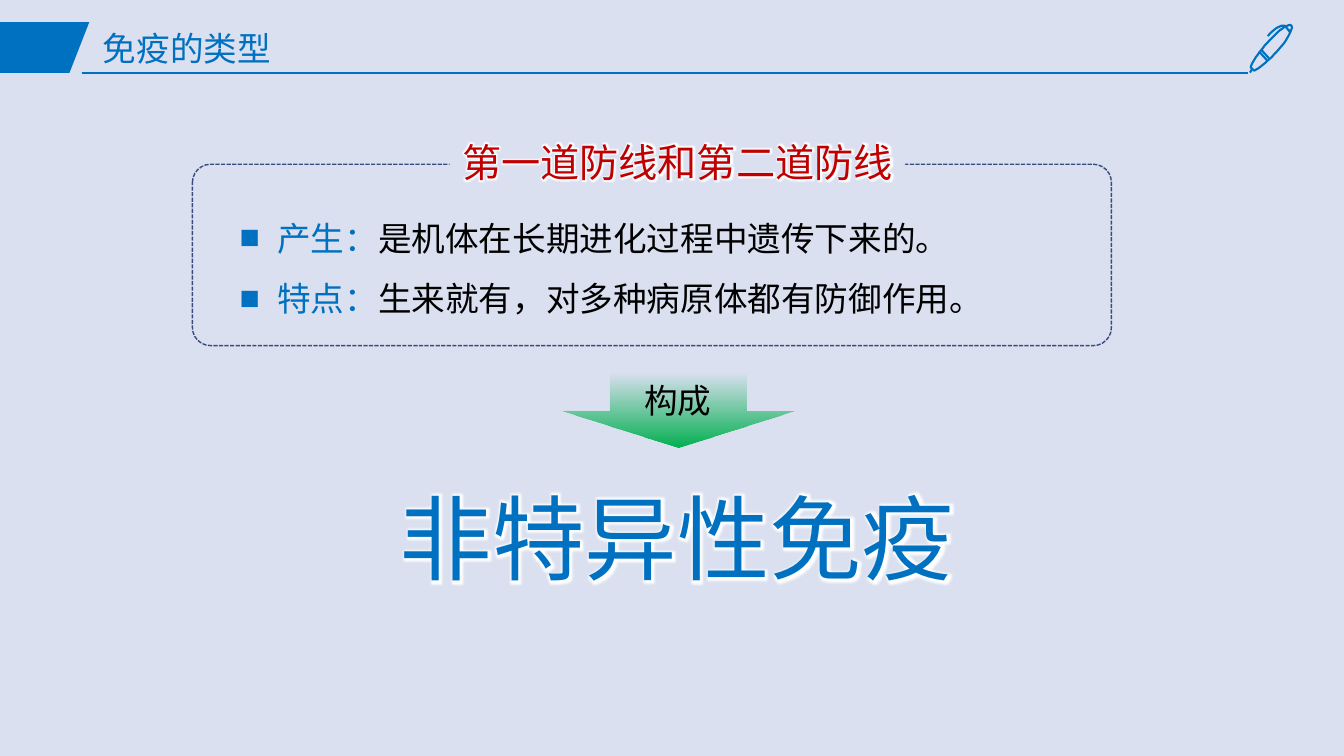
from dataclasses import dataclass

from lxml.etree import SubElement
from pptx import Presentation
from pptx.dml.color import RGBColor as RGB
from pptx.enum.dml import MSO_LINE as Dash
from pptx.enum.shapes import MSO_CONNECTOR as Conn, MSO_SHAPE as Shape
from pptx.enum.text import MSO_ANCHOR as Anchor, MSO_AUTO_SIZE as Auto, PP_ALIGN as Align
from pptx.oxml import parse_xml
from pptx.oxml.ns import nsdecls, qn
from pptx.util import Cm, Pt

COLORS = {"back": "DAE0EF", "blue": "0070C0", "red": "C00000", "green": "00B050",
          "navy": "374B7F", "black": "000000", "white": "FFFFFF"}
SERIF, SANS = "Times New Roman", "Noto Sans CJK SC"
UNIT = 3600  # freeform points are in hundredths of a centimetre

Point = tuple[int, int]


@dataclass
class Label:
    """A one-line text block on a plain ground."""
    text: str
    box: tuple[float, float, float, float]
    size: int
    color: str


@dataclass
class Fact:
    """A bulleted line with a coloured lead-in."""
    lead: str
    body: str


HEADING = Label("第一道防线和第二道防线", (11.33, 3.35, 11.48, 1.45), 28, "red")
CONCLUSION = Label("非特异性免疫", (9.75, 12.01, 14.63, 3.07), 66, "blue")
FACTS = [Fact("产生：", "是机体在长期进化过程中遗传下来的。"),
         Fact("特点：", "生来就有，对多种病原体都有防御作用。")]

BANNER = [(0, 56), (225, 56), (175, 184), (0, 184), (0, 56)]
# Two points make a straight stroke, 3n + 1 points a chain of Bézier curves
PEN = [
    [(3193, 152), (3175, 132)],
    [(3180, 127), (3198, 147)],
    [(3254, 64), (3249, 58), (3221, 76), (3193, 109), (3170, 135), (3155, 157),
     (3152, 170), (3152, 170), (3160, 178), (3160, 178), (3170, 175), (3193, 157),
     (3216, 132), (3244, 102), (3261, 71), (3254, 64)],
    [(3155, 175), (3150, 183)],
    [(3251, 81), (3251, 81), (3246, 74), (3239, 66), (3239, 66), (3226, 56), (3195, 91)],
]


def rgb(name: str) -> RGB:
    return RGB.from_string(COLORS[name])


def assign(obj, values: dict) -> None:
    for name, value in values.items():
        setattr(obj, name, value)


def fill_solid(sp, color: str) -> None:
    sp.fill.solid()
    sp.fill.fore_color.rgb = rgb(color)


def add_run(p, text: str, size: int, color: str, font: str, glow: bool = False) -> None:
    r = p.add_run()
    r.text = text
    assign(r.font, {"size": Pt(size), "name": font})
    r.font.color.rgb = rgb(color)
    rPr = r.font._element
    SubElement(rPr, qn("a:ea")).set("typeface", SANS)
    if glow:
        rPr.find(qn("a:solidFill")).addnext(parse_xml(
            f'<a:effectLst {nsdecls("a")}><a:glow rad="63500">'
            f'<a:srgbClr val="{COLORS["white"]}"/></a:glow></a:effectLst>'))


def add_label(shapes, label: Label) -> None:
    tb = shapes.add_textbox(*map(Cm, label.box))
    fill_solid(tb, "back")
    tf = tb.text_frame
    assign(tf, {"word_wrap": False, "auto_size": Auto.SHAPE_TO_FIT_TEXT})
    p = tf.paragraphs[0]
    p.alignment = Align.CENTER
    add_run(p, label.text, label.size, label.color, SERIF, glow=True)


def add_bullet(p) -> None:
    pPr = p._p.get_or_add_pPr()
    pPr.set("marL", str(Cm(0.95)))
    pPr.set("indent", str(-Cm(0.95)))
    color = SubElement(pPr, qn("a:buClr"))
    SubElement(color, qn("a:srgbClr")).set("val", COLORS["blue"])
    SubElement(pPr, qn("a:buFont")).set("typeface", SERIF)
    SubElement(pPr, qn("a:buChar")).set("char", "■")


def sample(stroke: list[Point], steps: int = 12) -> list[Point]:
    """Turn a chain of cubic curves into short segments."""
    if len(stroke) == 2:
        return stroke
    points = [stroke[0]]
    for i in range(0, len(stroke) - 1, 3):
        for k in range(1, steps + 1):
            t = k / steps
            weights = ((1 - t) ** 3, 3 * t * (1 - t) ** 2, 3 * t * t * (1 - t), t ** 3)
            points.append(tuple(round(sum(w * pt[axis] for w, pt in zip(weights, stroke[i:i + 4])))
                                for axis in (0, 1)))
    return points


def add_outline(shapes, strokes: list[list[Point]]):
    builder = shapes.build_freeform(*strokes[0][0], scale=UNIT)
    for i, stroke in enumerate(strokes):
        points = sample(stroke) if stroke is not BANNER else stroke
        if i:
            builder.move_to(*points[0])
        builder.add_line_segments(points[1:], close=points[0] == points[-1])
    sp = builder.convert_to_shape()
    sp.shadow.inherit = False
    return sp


def add_header(slide) -> None:
    shapes = slide.shapes
    banner = add_outline(shapes, [BANNER])
    fill_solid(banner, "blue")
    banner.line.fill.background()

    rule = shapes.add_connector(Conn.STRAIGHT, Cm(2.06), Cm(1.84), Cm(31.45), Cm(1.84))
    SubElement(rule._element.spPr, qn("a:effectLst"))
    pen = add_outline(shapes, PEN)
    pen.fill.background()
    for sp in (rule, pen):
        sp.line.color.rgb = rgb("blue")
        sp.line.width = Pt(1.5)

    title = shapes.title
    assign(title, {"left": Cm(2.34), "top": Cm(0.53), "width": Cm(29.21), "height": Cm(1.5)})
    title.text_frame.vertical_anchor = Anchor.MIDDLE
    p = title.text_frame.paragraphs[0]
    assign(p, {"alignment": Align.LEFT, "line_spacing": 0.9})
    add_run(p, "免疫的类型", 24, "blue", SERIF)


def add_facts(shapes) -> None:
    tf = shapes.add_textbox(Cm(5.79), Cm(4.85), Cm(19.05), Cm(3.18)).text_frame
    assign(tf, {"word_wrap": True, "auto_size": Auto.SHAPE_TO_FIT_TEXT})
    for i, fact in enumerate(FACTS):
        p = tf.add_paragraph() if i else tf.paragraphs[0]
        add_bullet(p)
        p.line_spacing = 1.5
        add_run(p, fact.lead, 24, "blue", SANS)
        add_run(p, fact.body, 24, "black", SANS)


def add_frame(shapes) -> None:
    group = shapes.add_group_shape()
    frame = group.shapes.add_shape(Shape.ROUNDED_RECTANGLE, Cm(4.85), Cm(4.14), Cm(23.16), Cm(4.57))
    frame.adjustments[0] = 0.1
    frame.shadow.inherit = False
    frame.fill.background()
    frame.line.color.rgb = rgb("navy")
    assign(frame.line, {"width": Pt(1), "dash_style": Dash.SQUARE_DOT})
    add_label(group.shapes, HEADING)


def add_arrow(shapes) -> None:
    arrow = shapes.add_shape(Shape.DOWN_ARROW, Cm(14.12), Cm(9.42), Cm(5.92), Cm(1.85))
    arrow.adjustments[0] = 0.58
    arrow.shadow.inherit = False
    arrow.line.fill.background()
    # Green at the tip, fading to clear at the top
    green = COLORS["green"]
    arrow._element.spPr.find(qn("a:prstGeom")).addnext(parse_xml(
        f'<a:gradFill {nsdecls("a")} rotWithShape="1"><a:gsLst>'
        f'<a:gs pos="0"><a:srgbClr val="{green}"/></a:gs>'
        f'<a:gs pos="100000"><a:srgbClr val="{green}"><a:alpha val="0"/></a:srgbClr></a:gs>'
        '</a:gsLst><a:lin ang="16200000" scaled="0"/></a:gradFill>'))
    tf = arrow.text_frame
    tf.vertical_anchor = Anchor.MIDDLE
    p = tf.paragraphs[0]
    p.alignment = Align.CENTER
    add_run(p, "构成", 24, "black", SANS)


def main() -> None:
    prs = Presentation()
    assign(prs, {"slide_width": Cm(33.87), "slide_height": Cm(19.05)})
    slide = prs.slides.add_slide(prs.slide_layouts[5])
    fill_solid(slide.background, "back")
    add_header(slide)
    add_frame(slide.shapes)
    add_facts(slide.shapes)
    add_arrow(slide.shapes)
    add_label(slide.shapes, CONCLUSION)
    prs.save("out.pptx")


if __name__ == "__main__":
    main()
